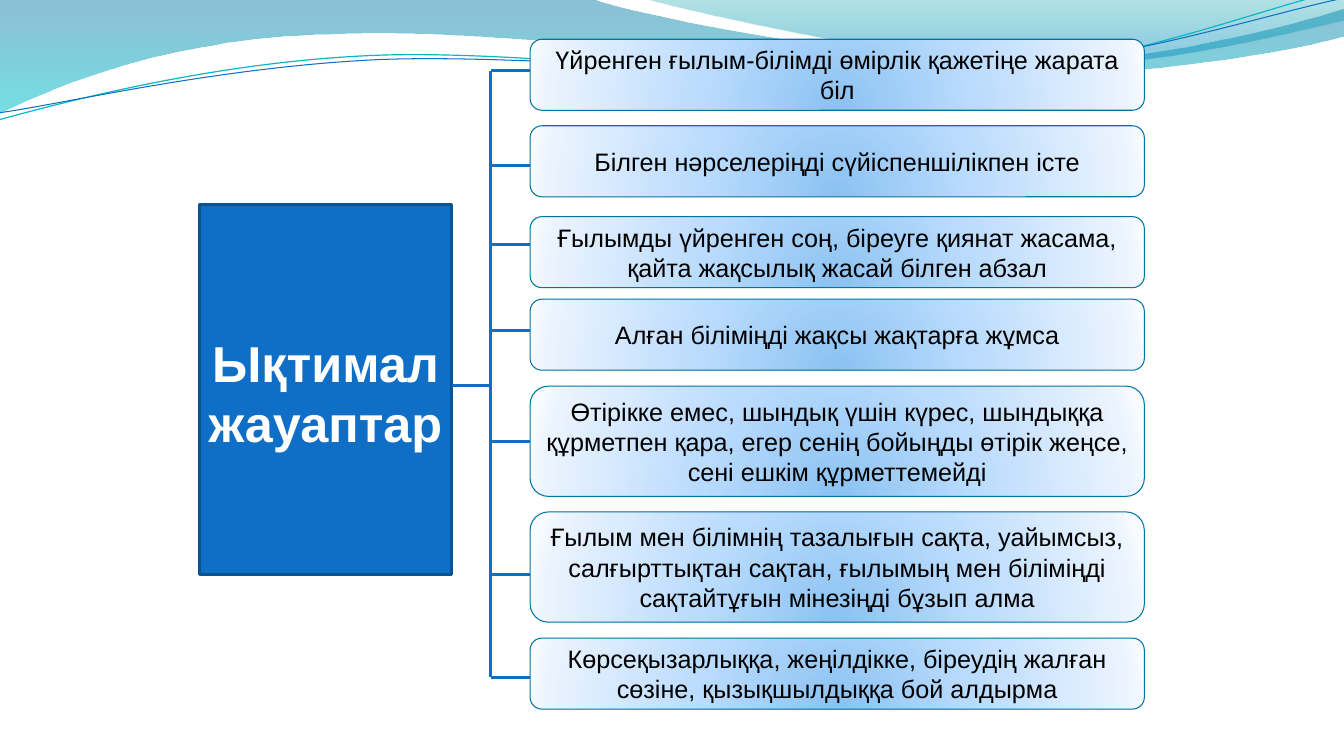
from lxml import etree
from pptx import Presentation
from pptx import util as u
from pptx.dml.color import RGBColor
from pptx.enum import shapes, text
from pptx.oxml import parse_xml
from pptx.oxml.ns import nsdecls, qn

COLORS = {"blue": "0F6FC6", "navy": "0B5292", "teal": "0074A1", "cyan": "0AB8BF",
          "white": "FFFFFF", "black": "000000"}
RGB = {name: RGBColor.from_string(value) for name, value in COLORS.items()}

# Gradient stops: position %, colour, opacity %
CARD_STOPS = [(0, "8BC2F1", 100), (43, "B9DBFD", 100), (93, "EAF3FE", 100), (100, "F8FBFF", 100)]
CARD_SHADE = '<a:path path="circle"><a:fillToRect l="50000" t="130000" r="50000" b="-30000"/></a:path>'
WAVE_SHADE = '<a:lin ang="5400000" scaled="0"/>'

# Outlines in cm: a pair is a straight step, six numbers are a Bezier curve
WAVES = [
    ([(0, 0), (14.91, -0.03),
      (16.1, 0.43, 22.48, 1.6, 25.68, 1.6), (28.91, 1.6, 32.46, 0.66, 33.86, 0.23),
      (33.91, 0.91),
      (33.3, 1.12, 29.46, 1.93, 25.25, 1.91), (21.06, 1.91, 12.93, 0.71, 8.71, 0.86),
      (4.37, 0.91, 1.55, 2.11, -0.03, 2.87)],
     [(0, "0074A1", 45), (100, "00C6CF", 55)]),
    ([(16.23, -0.03),
      (17.25, 0.28, 23.09, 1.57, 26.04, 1.65), (28.98, 1.75, 32.56, 0.81, 33.86, 0.53),
      (33.86, 0)],
     [(0, "00A1A9", 30), (80, "008BBF", 45)]),
]
WAVE_LINES = [
    ([(-0.03, 3.02), (1.63, 2.57, 5.36, 1.57, 9.37, 1.4),
      (13.39, 1.22, 20.07, 2.21, 24.13, 1.93), (28.19, 1.68, 31.8, 0.2, 33.81, -0.25)],
     "cyan", 0.85),
    ([(0, 2.84), (1.6, 2.62, 5.54, 1.68, 9.6, 1.5),
      (13.64, 1.35, 20.22, 2.08, 24.26, 1.83), (28.32, 1.57, 31.88, 0.36, 33.88, -0.05)],
     "blue", 0.75),
]

# Answer cards: top, height, branch height (cm), wording
ANSWERS = [
    (0.99, 1.79, 1.78, "Үйренген ғылым-білімді өмірлік қажетіңе жарата біл"),
    (3.17, 1.79, 4.17, "Білген нәрселеріңді сүйіспеншілікпен істе"),
    (5.46, 1.79, 6.16, "Ғылымды үйренген соң, біреуге қиянат жасама, қайта жақсылық жасай білген абзал"),
    (7.54, 1.79, 8.33, "Алған біліміңді жақсы жақтарға жұмса"),
    (9.73, 2.78, 11.12, "Өтірікке емес, шындық үшін күрес, шындыққа құрметпен қара, "
                        "егер сенің бойыңды өтірік жеңсе, сені ешкім құрметтемейді"),
    (12.9, 2.78, 14.48, "Ғылым мен білімнің тазалығын сақта, уайымсыз, салғырттықтан сақтан, "
                        "ғылымың мен біліміңді сақтайтұғын мінезіңді бұзып алма"),
    (16.08, 1.79, 17.07, "Көрсеқызарлыққа, жеңілдікке, біреудің жалған сөзіне, "
                         "қызықшылдыққа бой алдырма"),
]
TITLE_RIGHT, TRUNK_X, CARD_X, CARD_W = 11.38, 12.37, 13.36, 15.48


def draw_outline(s, steps, closed):
    """Add a freeform through all points, then join each three of a curve into one Bezier."""
    pts = [(u.Cm(step[i]), u.Cm(step[i + 1])) for step in steps for i in range(0, len(step), 2)]
    builder = s.shapes.build_freeform(*pts[0])
    builder.add_line_segments(pts[1:], close=closed)
    sp = builder.convert_to_shape()
    sp.shadow.inherit = False
    segments = iter(list(sp.element.iter(qn("a:lnTo"))))
    for step in steps[1:]:
        first = next(segments)
        if len(step) == 6:
            first.tag = qn("a:cubicBezTo")
            for segment in (next(segments), next(segments)):
                first.append(segment[0])
                segment.getparent().remove(segment)
    return sp


def fill_gradient(sp, stops, shade):
    sp.fill.gradient()
    old = sp.element.spPr.find(qn("a:gradFill"))
    gs = "".join(f'<a:gs pos="{pos * 1000}"><a:srgbClr val="{color}">'
                 f'<a:alpha val="{opacity * 1000}"/></a:srgbClr></a:gs>'
                 for pos, color, opacity in stops)
    new = parse_xml(f'<a:gradFill {nsdecls("a")} rotWithShape="1"><a:gsLst>{gs}</a:gsLst>{shade}</a:gradFill>')
    old.getparent().replace(old, new)


prs = Presentation()
prs.slide_width, prs.slide_height = u.Cm(33.87), u.Cm(19.05)
s = prs.slides.add_slide(prs.slide_layouts[5])

# Waves along the top
for steps, stops in WAVES:
    sp = draw_outline(s, steps, True)
    fill_gradient(sp, stops, WAVE_SHADE)
    sp.line.fill.background()
for steps, color, width in WAVE_LINES:
    sp = draw_outline(s, steps, False)
    sp.fill.background()
    sp.line.color.rgb = RGB[color]
    sp.line.width = u.Pt(width)

# Title block
title = s.shapes.title
title.left, title.top, title.width, title.height = u.Cm(5.03), u.Cm(5.16), u.Cm(6.35), u.Cm(9.32)
title.fill.solid()
title.fill.fore_color.rgb = RGB["blue"]
title.line.color.rgb = RGB["navy"]
title.line.width = u.Pt(2)
tf = title.text_frame
tf.text = "Ықтимал жауаптар"
tf.word_wrap = True
tf.auto_size = text.MSO_AUTO_SIZE.NONE
tf.margin_left = tf.margin_right = tf.margin_bottom = 0
tf.margin_top = u.Cm(0.13)
labels = [(tf, (36, True, "white"))]

# Stem, trunk and one branch for each answer
branch_ys = [y for _, _, y, _ in ANSWERS]
links = [(TITLE_RIGHT, 9.72, TRUNK_X, 9.72), (TRUNK_X, branch_ys[-1], TRUNK_X, branch_ys[0])]
links += [(TRUNK_X, y, CARD_X, y) for y in branch_ys]
for link in links:
    cn = s.shapes.add_connector(shapes.MSO_CONNECTOR.STRAIGHT, *[u.Cm(v) for v in link])
    cn.line.color.rgb = RGB["blue"]
    cn.line.width = u.Pt(2)
    etree.SubElement(cn.element.spPr, qn("a:effectLst"))

# Answer cards
for top, height, _, wording in ANSWERS:
    sp = s.shapes.add_shape(shapes.MSO_SHAPE.ROUNDED_RECTANGLE,
                            u.Cm(CARD_X), u.Cm(top), u.Cm(CARD_W), u.Cm(height))
    sp.shadow.inherit = False
    fill_gradient(sp, CARD_STOPS, CARD_SHADE)
    sp.line.color.rgb = RGB["teal"]
    sp.line.width = u.Pt(0.75)
    sp.text_frame.text = wording
    sp.text_frame.word_wrap = True
    labels.append((sp.text_frame, (18, False, "black")))

for tf, (size, bold, color) in labels:
    tf.vertical_anchor = text.MSO_ANCHOR.MIDDLE
    p = tf.paragraphs[0]
    p.alignment = text.PP_ALIGN.CENTER
    r = p.runs[0]
    r.font.name = "Arial"
    r.font.size = u.Pt(size)
    r.font.bold = bold
    r.font.color.rgb = RGB[color]

prs.save("out.pptx")
